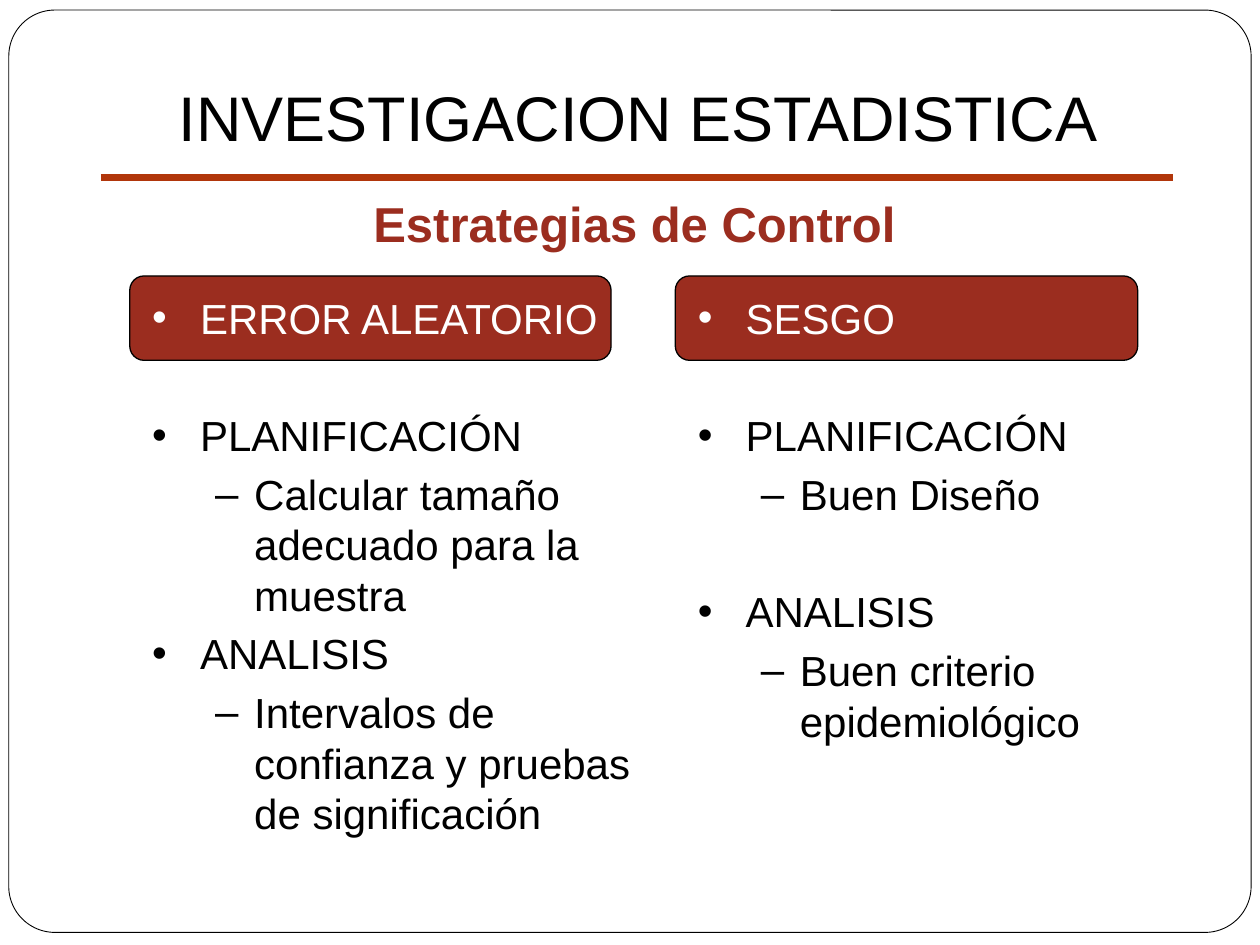
from dataclasses import dataclass

from lxml import etree
from pptx import Presentation
from pptx import util as u
from pptx.dml.color import RGBColor
from pptx.enum import shapes, text
from pptx.oxml import ns

PX = 9144
FONT = "Arial"
COLORS = {"white": "FFFFFF", "black": "000000", "brick": "9B2D1F", "rule": "B1360B"}
BODY_PT = 24
SPACE_PT = 4.8
SKIPPED_LINE_PT = 38.3


@dataclass(frozen=True)
class Box:
    x: int
    y: int
    w: int
    h: int

    def emu(self) -> list[int]:
        return [v * PX for v in (self.x, self.y, self.w, self.h)]


@dataclass(frozen=True)
class Bullet:
    margin: int
    hanging: int
    char: str


@dataclass(frozen=True)
class Item:
    words: str
    level: int = 0
    color: str = "black"
    space: float = SPACE_PT


@dataclass(frozen=True)
class Column:
    x: int
    header_w: int
    items: tuple[Item, ...]


BULLETS = (Bullet(38, 38, "•"), Bullet(81, 31, "–"))
COLUMNS = (
    Column(103, 382, (
        Item("ERROR ALEATORIO", color="white"),
        Item("PLANIFICACIÓN", space=SKIPPED_LINE_PT),
        Item("Calcular tamaño adecuado para la muestra", 1),
        Item("ANALISIS"),
        Item("Intervalos de confianza y pruebas de significación", 1),
    )),
    Column(536, 367, (
        Item("SESGO", color="white"),
        Item("PLANIFICACIÓN", space=SKIPPED_LINE_PT),
        Item("Buen Diseño", 1),
        Item("ANALISIS", space=SKIPPED_LINE_PT),
        Item("Buen criterio epidemiológico", 1),
    )),
)


def rgb(name: str) -> RGBColor:
    return RGBColor.from_string(COLORS[name])


def add_panel(s, box: Box, fill: str, line_pt: float, radius: float) -> None:
    sp = s.shapes.add_shape(shapes.MSO_SHAPE.ROUNDED_RECTANGLE, *box.emu())
    sp.adjustments[0] = radius
    sp.shadow.inherit = False
    sp.fill.solid()
    sp.fill.fore_color.rgb = rgb(fill)
    sp.line.color.rgb = rgb("black")
    sp.line.width = u.Pt(line_pt)


def add_frame(s, box: Box, anchor):
    tf = s.shapes.add_textbox(*box.emu()).text_frame
    tf.word_wrap = True
    tf.vertical_anchor = anchor
    return tf


def add_run(p, words: str, size: int, color: str, bold: bool = False) -> None:
    r = p.add_run()
    r.text = words
    r.font.name = FONT
    r.font.size = u.Pt(size)
    r.font.bold = bold
    r.font.color.rgb = rgb(color)


def add_heading(s, box: Box, words: str, size: int, color: str, bold: bool) -> None:
    p = add_frame(s, box, text.MSO_ANCHOR.MIDDLE).paragraphs[0]
    p.alignment = text.PP_ALIGN.CENTER
    add_run(p, words, size, color, bold)


def set_bullet(p, bullet: Bullet) -> None:
    ppr = p._p.get_or_add_pPr()
    ppr.set("marL", str(bullet.margin * PX))
    ppr.set("indent", str(-bullet.hanging * PX))
    etree.SubElement(ppr, ns.qn("a:buFont")).set("typeface", FONT)
    etree.SubElement(ppr, ns.qn("a:buChar")).set("char", bullet.char)


def add_list(s, col: Column) -> None:
    tf = add_frame(s, Box(col.x + 8, 227, 417, 450), text.MSO_ANCHOR.TOP)
    for i, item in enumerate(col.items):
        p = tf.add_paragraph() if i else tf.paragraphs[0]
        p.level = item.level
        p.space_before = u.Pt(item.space)
        set_bullet(p, BULLETS[item.level])
        add_run(p, item.words, BODY_PT, item.color)


def add_rule(s, x1: int, x2: int, y: int) -> None:
    line = s.shapes.add_connector(
        shapes.MSO_CONNECTOR.STRAIGHT, x1 * PX, y * PX, x2 * PX, y * PX)
    line.line.color.rgb = rgb("rule")
    line.line.width = u.Pt(4)
    etree.SubElement(line._element.spPr, ns.qn("a:effectLst"))


def main() -> None:
    prs = Presentation()
    prs.slide_width, prs.slide_height = 1000 * PX, 750 * PX
    s = prs.slides.add_slide(prs.slide_layouts[6])
    add_panel(s, Box(7, 8, 986, 732), "white", 0.5, 0.05)
    for col in reversed(COLUMNS):
        add_panel(s, Box(col.x, 219, col.header_w, 67), "brick", 0.75, 0.17)
    add_heading(s, Box(62, 134, 883, 85), "Estrategias de Control", 28, "brick", True)
    for col in COLUMNS:
        add_list(s, col)
    add_heading(s, Box(75, 44, 850, 97), " INVESTIGACION ESTADISTICA", 36, "black", False)
    add_rule(s, 80, 931, 141)
    prs.save("out.pptx")


if __name__ == "__main__":
    main()
